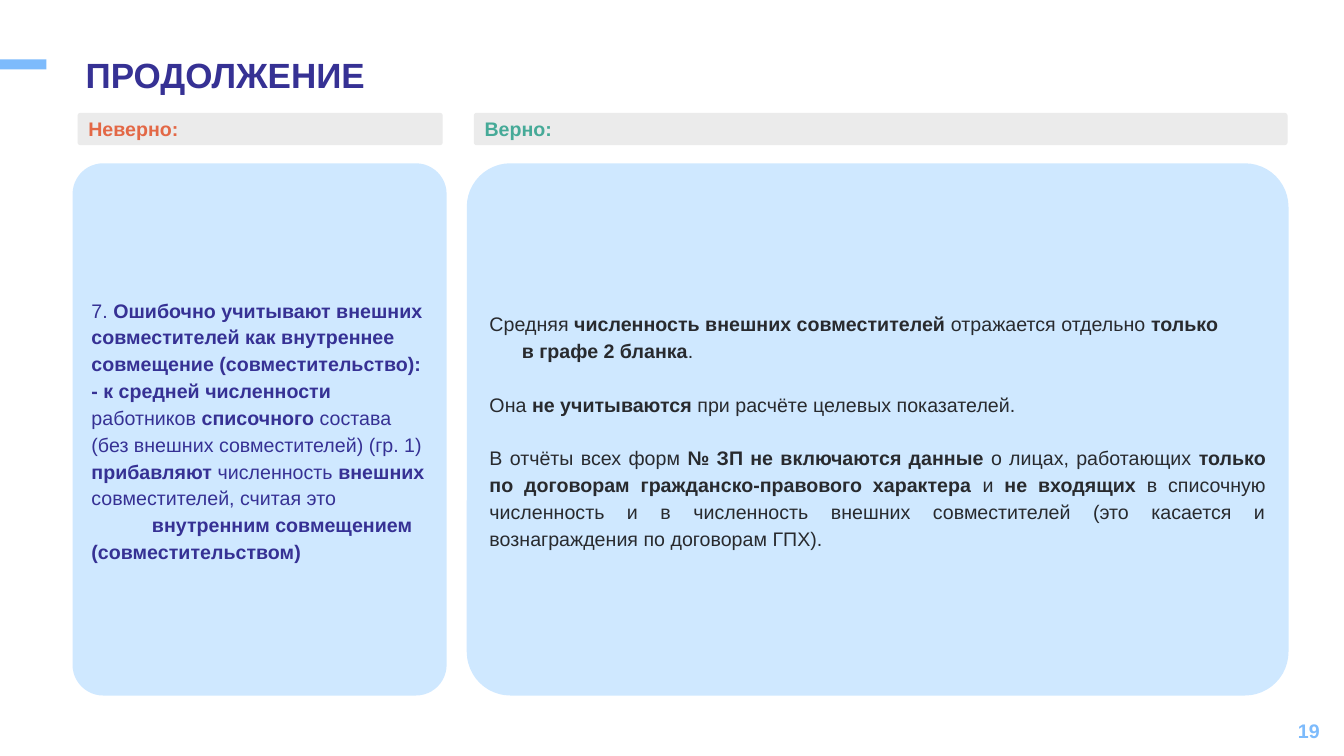
from pptx import Presentation
from pptx import util as u
from pptx.dml.color import RGBColor
from pptx.enum import shapes, text

THEME = dict(font="Arial", title=25, body=14,
             indigo="363194", ink="282A2E", sky="7DBBFC", panel="CFE8FF",
             label="EBEBEB", wrong="E36846", right="46AA98")
LEFT, RIGHT, JUSTIFY = text.PP_ALIGN.LEFT, text.PP_ALIGN.RIGHT, text.PP_ALIGN.JUSTIFY
TOP, MIDDLE = text.MSO_ANCHOR.TOP, text.MSO_ANCHOR.MIDDLE

prs = Presentation()
prs.slide_width, prs.slide_height = u.Inches(13.33), u.Inches(7.5)
s = prs.slides.add_slide(prs.slide_layouts[5])  # Title Only


def place(x, y, w, h):
    """Turn percentages of the slide into left, top, width, height."""
    return [int(share * side / 100) for share, side in
            zip((x, y, w, h), (prs.slide_width, prs.slide_height) * 2)]


def write(sp, paragraphs, color, size=THEME["body"], align=LEFT, anchor=MIDDLE,
          spacing=1.0, bold=False, inset=(0.1, 0.05)):
    """Fill a shape with (text, first-line indent, space before); ** toggles bold."""
    tf = sp.text_frame
    tf.word_wrap, tf.auto_size = True, text.MSO_AUTO_SIZE.NONE
    tf.vertical_anchor = anchor
    tf.margin_left = tf.margin_right = u.Inches(inset[0])
    tf.margin_top = tf.margin_bottom = u.Inches(inset[1])
    for i, (line, indent, before) in enumerate(paragraphs):
        p = tf.add_paragraph() if i else tf.paragraphs[0]
        p.alignment, p.line_spacing, p.space_before = align, spacing, u.Pt(before)
        p._p.get_or_add_pPr().set("indent", str(u.Inches(indent)))
        for j, part in enumerate(line.split("**")):
            if part:
                r = p.add_run()
                r.text = part
                r.font.name, r.font.size = THEME["font"], u.Pt(size)
                r.font.bold = bold or j % 2 == 1
                r.font.color.rgb = RGBColor.from_string(THEME[color])


# Title and page number
title = s.shapes.title
title.left, title.top, title.width, title.height = place(5.55, 6.93, 66.47, 7.6)
write(title, [("ПРОДОЛЖЕНИЕ", 0, 0)], "indigo", THEME["title"], anchor=TOP,
      spacing=0.9, bold=True, inset=(0.11, 0.06))
number = s.shapes.add_textbox(*place(76.52, 94, 22.51, 5.33))
write(number, [("19", 0, 0)], "sky", align=RIGHT, bold=True, inset=(0.11, 0.06))

# Column contents
GAP = 19.2  # one line of body text
wrong = [
    ("7. **Ошибочно учитывают внешних совместителей как внутреннее совмещение "
     "(совместительство):**", 0, 0),
    ("**- к средней численности **работников **списочного** состава (без внешних "
     "совместителей) (гр. 1) **прибавляют** численность **внешних** совместителей, "
     "считая это", 0, 0),
    ("**внутренним совмещением (совместительством)**", 0.6, 0),
]
right = [
    ("Средняя **численность внешних совместителей **отражается отдельно **только**", 0, 0),
    ("**в графе 2 бланка**.", 0.32, 0),
    ("Она **не учитываются **при расчёте целевых показателей.", 0, GAP),
    ("В отчёты всех форм **№ ЗП не включаются данные** о лицах, работающих **только "
     "по договорам гражданско-правового характера** и **не входящих **в списочную "
     "численность и в численность внешних совместителей (это касается и "
     "вознаграждения по договорам ГПХ).", 0, GAP),
]

# Label and panel of each column: x and width in percent
columns = [
    ("Неверно:", "wrong", (5.78, 27.16), (5.4, 27.83), wrong, "indigo", LEFT),
    ("Верно:", "right", (35.26, 60.54), (34.73, 61.14), right, "ink", JUSTIFY),
]
ROUND, RECT = shapes.MSO_SHAPE.ROUNDED_RECTANGLE, shapes.MSO_SHAPE.RECTANGLE
blocks = [(RECT, "sky", (0, 7.87, 3.45, 1.33), None, None)]  # accent bar
for name, hue, (lx, lw), (px, pw), body, ink, align in columns:
    blocks += [
        (ROUND, "panel", (px, 21.6, pw, 70.4), body,
         dict(color=ink, align=align, spacing=1.14)),
        (ROUND, "label", (lx, 14.93, lw, 4.27), [(name, 0, 0)],
         dict(color=hue, bold=True)),
    ]

# Draw the bar, panels and labels
for kind, fill, area, paragraphs, fmt in blocks:
    sp = s.shapes.add_shape(kind, *place(*area))
    sp.shadow.inherit = False
    sp.fill.solid()
    sp.fill.fore_color.rgb = RGBColor.from_string(THEME[fill])
    sp.line.fill.background()
    if kind == ROUND:
        sp.adjustments[0] = 0.082
        write(sp, paragraphs, **fmt)

prs.save("out.pptx")
